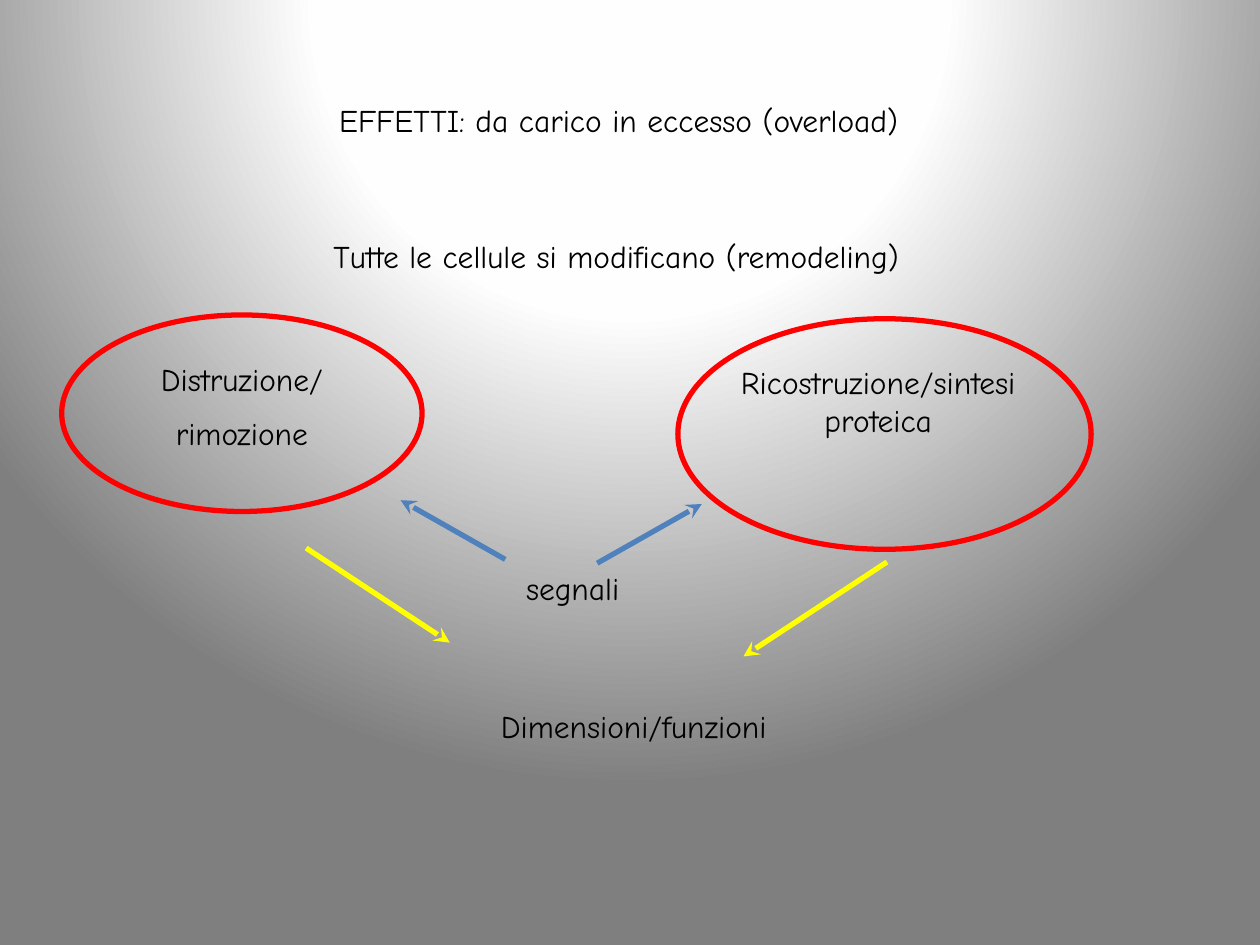
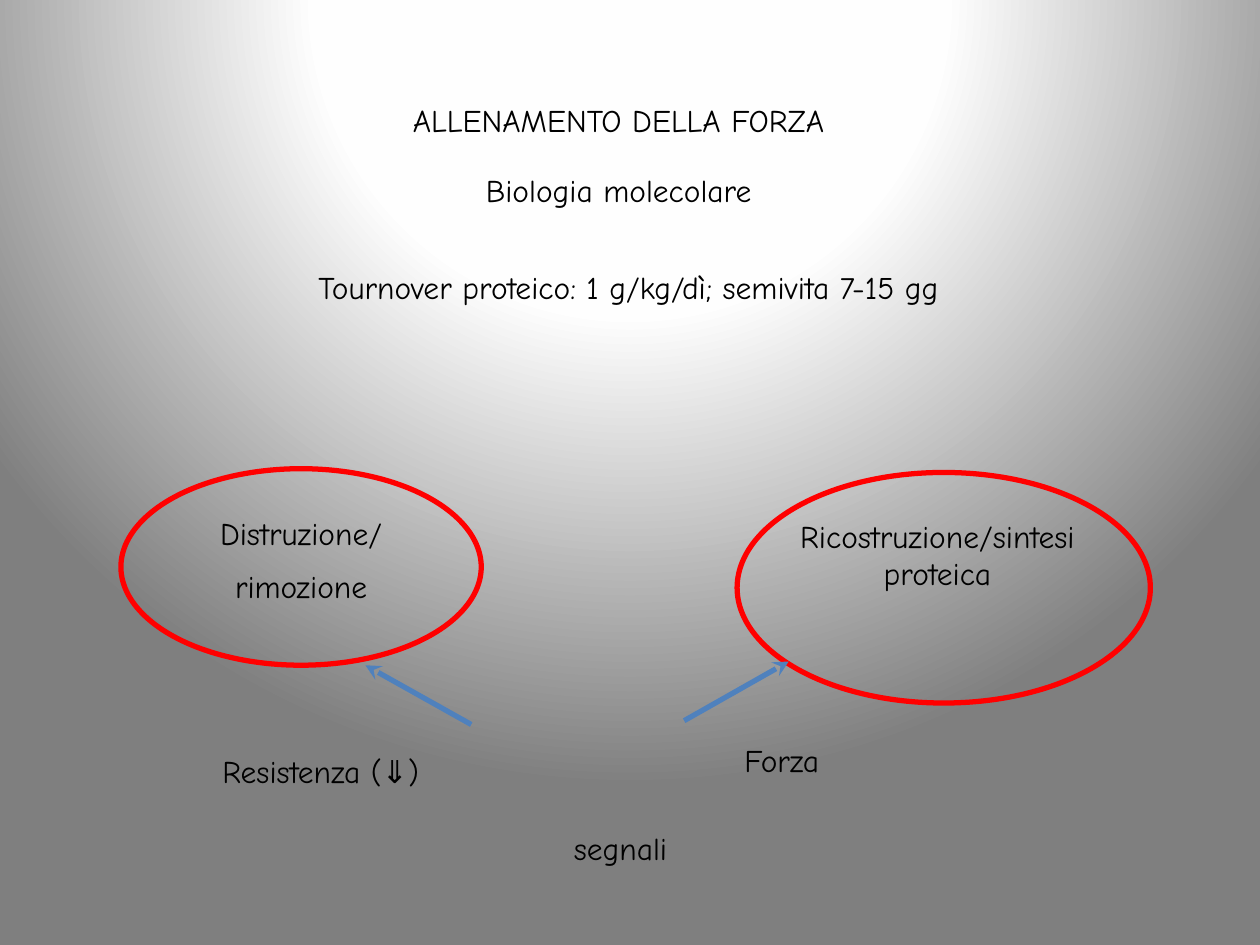
from lxml import etree
from pptx import Presentation
from pptx.dml.color import RGBColor
from pptx.enum.shapes import MSO_CONNECTOR as Connector, MSO_SHAPE as Shape
from pptx.enum.text import MSO_AUTO_SIZE as AutoSize, PP_ALIGN as Align
from pptx.oxml import parse_xml
from pptx.oxml.ns import nsdecls, qn
from pptx.util import Pt

EMU_PER_PX = 9144
FONT = "Comic Neue"
TEXT, OVAL, SIGNAL, RESULT = "000000", "FF0000", "4F81BD", "FFFF00"
BACKGROUND_STOPS = [(0, "FFFFFF"), (40, "FEFEFE"), (100, "7F7F7F")]
BANNER_WIDTH, SIGNAL_WIDTH, OVAL_LABEL_WIDTH = 844, 147, 250
LINE_HEIGHT = 40


def px(*lengths):
    return [length * EMU_PER_PX for length in lengths]


def color(value):
    return RGBColor.from_string(value)


def set_background(master):
    master.background.fill.gradient()
    linear = master.element.find(".//" + qn("a:gradFill"))
    stops = "".join(
        f'<a:gs pos="{percent * 1000}"><a:srgbClr val="{shade}"/></a:gs>'
        for percent, shade in BACKGROUND_STOPS
    )
    radial = parse_xml(
        f'<a:gradFill {nsdecls("a")} rotWithShape="1"><a:gsLst>{stops}</a:gsLst>'
        '<a:path path="circle">'
        '<a:fillToRect l="50000" t="-80000" r="50000" b="180000"/>'
        "</a:path></a:gradFill>"
    )
    linear.getparent().replace(linear, radial)


def style_line(line, shade):
    line.color.rgb = color(shade)
    line.width = Pt(3)


def add_label(slide, left, top, width, *lines, height=LINE_HEIGHT):
    frame = slide.shapes.add_textbox(*px(left, top, width, height)).text_frame
    frame.word_wrap = True
    frame.auto_size = AutoSize.SHAPE_TO_FIT_TEXT
    for index, wording in enumerate(lines):
        paragraph = frame.add_paragraph() if index else frame.paragraphs[0]
        paragraph.text = wording
        paragraph.alignment = Align.CENTER
        paragraph.space_before = Pt(9 if index else 0)
        paragraph.font.name = FONT
        paragraph.font.size = Pt(18)
        paragraph.font.color.rgb = color(TEXT)


def add_oval(slide, left, top, width, height):
    oval = slide.shapes.add_shape(Shape.OVAL, *px(left, top, width, height))
    oval.shadow.inherit = False
    oval.fill.background()
    style_line(oval.line, OVAL)


def add_arrow(slide, shade, start, end):
    arrow = slide.shapes.add_connector(Connector.STRAIGHT, *px(*start, *end))
    style_line(arrow.line, shade)
    etree.SubElement(arrow.line._get_or_add_ln(), qn("a:tailEnd"), type="stealth")
    etree.SubElement(arrow._element.spPr, qn("a:effectLst"))


def add_remodeling(slide, left, top):
    add_label(slide, left + 18, top + 31, OVAL_LABEL_WIDTH,
              "Distruzione/", "rimozione", height=86)
    add_oval(slide, left, top, 286, 156)
    add_label(slide, left + 523, top + 33, OVAL_LABEL_WIDTH,
              "Ricostruzione/sintesi proteica", height=71)
    add_oval(slide, left + 489, top + 3, 328, 183)


def build_overload(slide):
    add_label(slide, 69, 75, BANNER_WIDTH, "EFFETTI: da carico in eccesso (overload)")
    add_label(slide, 67, 183, BANNER_WIDTH, "Tutte le cellule si modificano (remodeling)")
    add_arrow(slide, RESULT, (243, 435), (357, 510))
    add_arrow(slide, RESULT, (704, 446), (590, 521))
    add_label(slide, 81, 556, BANNER_WIDTH, "Dimensioni/funzioni")
    add_remodeling(slide, 49, 250)
    add_label(slide, 381, 447, SIGNAL_WIDTH, "segnali")
    add_arrow(slide, SIGNAL, (401, 444), (318, 397))
    add_arrow(slide, SIGNAL, (474, 447), (557, 400))


def build_strength(slide):
    add_label(slide, 69, 75, BANNER_WIDTH, "ALLENAMENTO DELLA FORZA")
    add_label(slide, 69, 131, BANNER_WIDTH, "Biologia molecolare")
    add_label(slide, 81, 208, BANNER_WIDTH,
              "Tournover proteico: 1 g/kg/dì; semivita 7-15 gg ")
    add_remodeling(slide, 96, 372)
    add_arrow(slide, SIGNAL, (374, 575), (290, 528))
    add_arrow(slide, SIGNAL, (543, 572), (626, 525))
    add_label(slide, 419, 653, SIGNAL_WIDTH, "segnali")
    add_label(slide, 547, 583, SIGNAL_WIDTH, "Forza")
    add_label(slide, 117, 592, 275, "Resistenza (⇓)")


def main():
    deck = Presentation()
    deck.slide_width, deck.slide_height = px(1000, 750)
    set_background(deck.slide_master)
    blank = deck.slide_layouts[6]
    for build in (build_overload, build_strength):
        build(deck.slides.add_slide(blank))
    deck.save("out.pptx")


if __name__ == "__main__":
    main()
